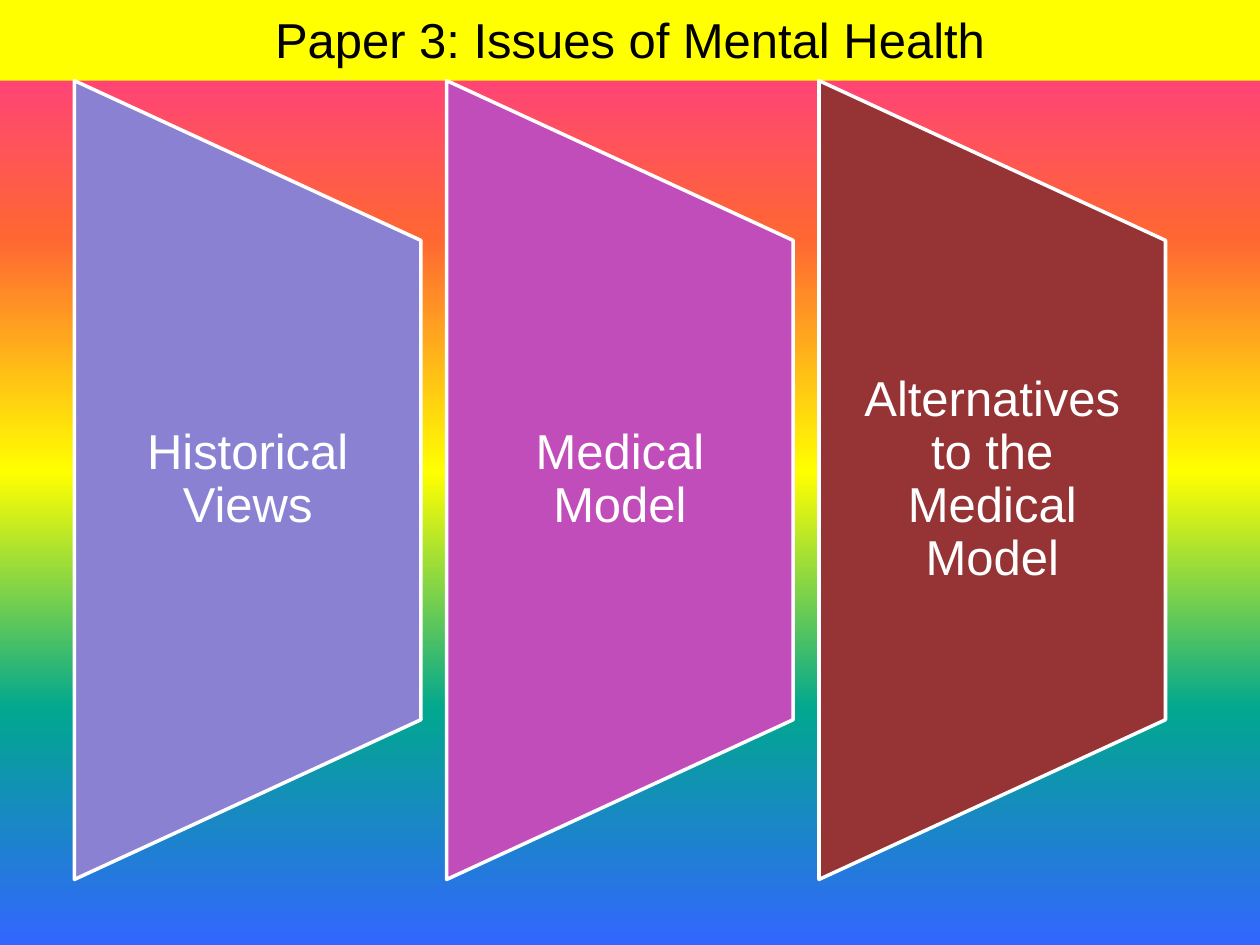
from lxml.etree import SubElement
from pptx import Presentation
from pptx.dml.color import RGBColor
from pptx.enum.shapes import MSO_SHAPE
from pptx.enum.text import MSO_ANCHOR, PP_ALIGN
from pptx.oxml.ns import qn
from pptx.util import Inches, Pt

COLS, ROWS = 100, 75
RAINBOW = ["FF3399", "FF6633", "FFFF00", "01A78F", "3366FF"]
PANELS = [
    ("Historical Views", "8B81D2"),
    ("Medical Model", "C14DBA"),
    ("Alternatives to the Medical Model", "963334"),
]
BAR = 6.4
LEFT, WIDTH, STEP = 5.9, 27.5, 29.55
HEIGHT = 63.4


def color(code):
    return RGBColor.from_string(code)


def write(frame, text, tone="000000", size=28, font="Arial",
          anchor=MSO_ANCHOR.MIDDLE, pads=(0.1, 0.1), space=1.0):
    """Put centred text in a frame; pads are side and top insets in inches."""
    frame.word_wrap = True
    frame.vertical_anchor = anchor
    frame.margin_left = frame.margin_right = Inches(pads[0])
    frame.margin_top = frame.margin_bottom = Inches(pads[1])
    para = frame.paragraphs[0]
    para.text = text
    para.alignment = PP_ALIGN.CENTER
    para.line_spacing = space
    para.font.name, para.font.size = font, Pt(size)
    para.font.color.rgb = color(tone)


class Canvas:
    def __init__(self, deck):
        self.slide = deck.slides.add_slide(deck.slide_layouts[6])
        self.col = deck.slide_width / COLS
        self.row = deck.slide_height / ROWS

    def place(self, x, y, w, h):
        return (round(x * self.col), round(y * self.row),
                round(w * self.col), round(h * self.row))

    def backdrop(self, tones):
        """Fill the slide with evenly spaced colours from top to bottom."""
        fill = self.slide.background.fill
        fill.gradient()
        fill.gradient_angle = 270
        stops = next(self.slide.element.iter(qn("a:gsLst")))
        stops.clear()
        for i, tone in enumerate(tones):
            stop = SubElement(stops, qn("a:gs"),
                              pos=str(100000 * i // (len(tones) - 1)))
            SubElement(stop, qn("a:srgbClr"), val=tone)

    def shape(self, kind, box, tone, edge=None):
        item = self.slide.shapes.add_shape(kind, *self.place(*box))
        item.shadow.inherit = False
        item.fill.solid()
        item.fill.fore_color.rgb = color(tone)
        if edge:
            item.line.color.rgb = color(edge)
            item.line.width = Pt(2)
        else:
            item.line.fill.background()
        return item

    def title(self, text):
        bar = self.shape(MSO_SHAPE.RECTANGLE, (0, 0, COLS, BAR), "FFFF00")
        write(bar.text_frame, text, anchor=MSO_ANCHOR.BOTTOM)

    def panel(self, x, text, tone):
        """Draw a trapezoid on its side, tall edge left, with its label."""
        turn = (HEIGHT - WIDTH) / 2
        flap = self.shape(MSO_SHAPE.FLOWCHART_MANUAL_OPERATION,
                          (x - turn, BAR + turn, HEIGHT, WIDTH),
                          tone, edge="FFFFFF")
        flap.rotation = 270
        box = self.place(x, BAR + HEIGHT / 5, WIDTH, HEIGHT * 0.6)
        label = self.slide.shapes.add_textbox(*box)
        write(label.text_frame, text, tone="FFFFFF", pads=(0.19, 0), space=0.9)


def main():
    deck = Presentation()
    deck.slide_width, deck.slide_height = Inches(10), Inches(7.5)
    page = Canvas(deck)
    page.backdrop(RAINBOW)
    page.title("Paper 3: Issues of Mental Health")
    for i, (text, tone) in enumerate(PANELS):
        page.panel(LEFT + i * STEP, text, tone)
    deck.save("out.pptx")


if __name__ == "__main__":
    main()
